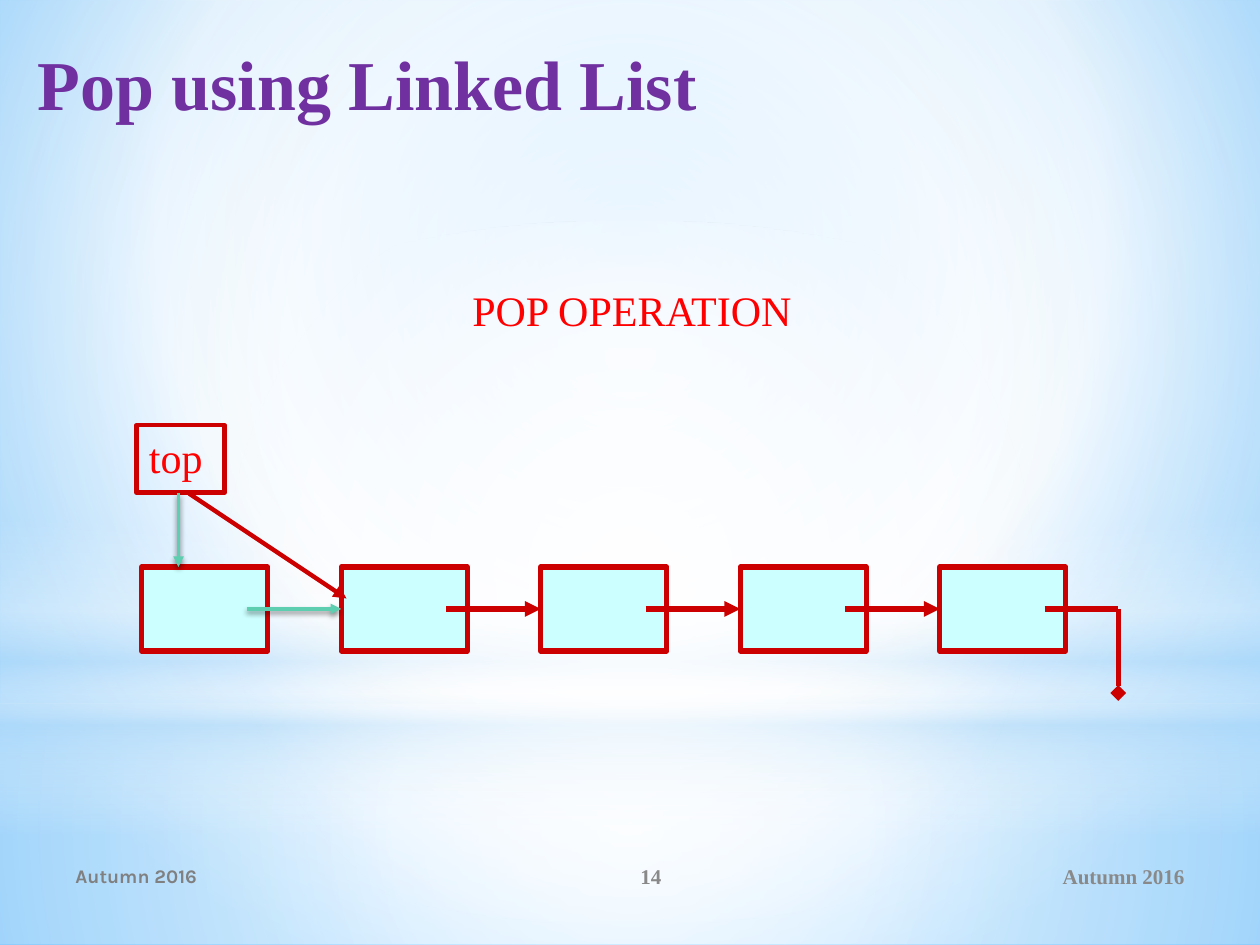
from lxml import etree
from pptx import Presentation
from pptx.dml.color import RGBColor
from pptx.enum.shapes import MSO_CONNECTOR, MSO_SHAPE
from pptx.enum.text import MSO_ANCHOR, MSO_AUTO_SIZE, PP_ALIGN
from pptx.oxml import parse_xml
from pptx.oxml.ns import nsdecls, qn
from pptx.util import Inches, Pt

RECT, OVAL = MSO_SHAPE.RECTANGLE, MSO_SHAPE.OVAL
LINE = MSO_CONNECTOR.STRAIGHT
LEFT, MID, RIGHT = PP_ALIGN.LEFT, PP_ALIGN.CENTER, PP_ALIGN.RIGHT
TOP, CENTER = MSO_ANCHOR.TOP, MSO_ANCHOR.MIDDLE
GROW, FIXED = MSO_AUTO_SIZE.SHAPE_TO_FIT_TEXT, MSO_AUTO_SIZE.NONE

COLS, ROWS = 240, 180  # grid of 24 units to the inch
HUES = {
    "white": "FFFFFF", "pale": "B4DCFA", "sky": "9ED5FF", "blue": "5BB9FF",
    "cyan": "CCFFFF", "dark": "CC0000", "red": "FF0000", "green": "5DCEAF",
    "plum": "7030A0", "gray": "898989", "dim": "808080", "black": "000000",
}


def rgb(hue):
    return RGBColor.from_string(HUES[hue])


def write(frame, text, size=24, hue="red", font="Times New Roman",
          bold=False, align=LEFT, anchor=TOP, wrap=True):
    frame.word_wrap = wrap
    frame.auto_size = FIXED if wrap else GROW
    frame.vertical_anchor = anchor
    para = frame.paragraphs[0]
    para.alignment = align
    run = para.add_run()
    run.text = text
    run.font.size, run.font.name, run.font.bold = Pt(size), font, bold
    run.font.color.rgb = rgb(hue)


def blend(owner, stops, focus=None):
    """Swap the solid fill of owner for a gradient: round with a focus, else downward."""
    marks = "".join(
        f'<a:gs pos="{pos * 1000}"><a:srgbClr val="{HUES[hue]}">'
        f'<a:alpha val="{alpha * 1000}"/></a:srgbClr></a:gs>'
        for pos, hue, alpha in stops)
    if focus:
        sides = " ".join(f'{s}="{v * 1000}"' for s, v in zip("ltrb", focus))
        way = f'<a:path path="circle"><a:fillToRect {sides}/></a:path>'
    else:
        way = '<a:lin ang="5400000" scaled="0"/>'
    fill = parse_xml(f'<a:gradFill {nsdecls("a")} rotWithShape="1">'
                     f'<a:gsLst>{marks}</a:gsLst>{way}</a:gradFill>')
    owner.replace(owner.find(qn("a:solidFill")), fill)


class Deck:
    def __init__(self):
        self.show = Presentation()
        self.show.slide_width, self.show.slide_height = Inches(10), Inches(7.5)
        self.slide = self.show.slides.add_slide(self.show.slide_layouts[5])
        self.shapes = self.slide.shapes

    def place(self, *cells):
        spans = (self.show.slide_width / COLS, self.show.slide_height / ROWS)
        return [round(cell * spans[i % 2]) for i, cell in enumerate(cells)]

    def back(self, stops, focus):
        self.slide.background.fill.solid()
        blend(self.slide.element.xpath(".//p:bgPr")[0], stops, focus)

    def box(self, *cells, kind=RECT, fill=None, line=None, width=3):
        shape = self.shapes.add_shape(kind, *self.place(*cells))
        shape.shadow.inherit = False
        if fill:
            shape.fill.solid()
            shape.fill.fore_color.rgb = rgb(fill)
        else:
            shape.fill.background()
        if line:
            shape.line.color.rgb, shape.line.width = rgb(line), Pt(width)
        else:
            shape.line.fill.background()
        return shape

    def glow(self, *cells, stops, focus=None, kind=RECT):
        shape = self.box(*cells, kind=kind, fill="white")
        blend(shape.element.spPr, stops, focus)

    def text(self, *cells, text, **style):
        area = self.shapes.add_textbox(*self.place(*cells))
        write(area.text_frame, text, **style)

    def title(self, *cells, text, **style):
        head = self.shapes.title
        head.left, head.top, head.width, head.height = self.place(*cells)
        head.text_frame.margin_top = Inches(0.11)
        write(head.text_frame, text, **style)
        head.element.getparent().append(head.element)  # to the front

    def link(self, *cells, hue="dark", width=3, tip="triangle", shade=False):
        line = self.shapes.add_connector(LINE, *self.place(*cells))
        line.line.color.rgb, line.line.width = rgb(hue), Pt(width)
        props = line.element.spPr
        if tip:
            etree.SubElement(props.find(qn("a:ln")), qn("a:tailEnd"), type=tip)
        fx = etree.SubElement(props, qn("a:effectLst"))
        if shade:
            drop = etree.SubElement(fx, qn("a:outerShdw"), blurRad=str(Pt(3.1)),
                                    dist=str(Pt(1.8)), dir="5400000", rotWithShape="0")
            tint = etree.SubElement(drop, qn("a:srgbClr"), val=HUES["black"])
            etree.SubElement(tint, qn("a:alpha"), val="45000")


def main():
    deck = Deck()

    # Backdrop
    core = (50, 50, 50, 50)
    deck.back([(0, "sky", 100), (60, "white", 100), (100, "blue", 100)], (20, 10, 20, 60))
    deck.glow(0, 134, COLS, 46, focus=core,
              stops=[(0, "white", 91), (37, "white", 76), (100, "pale", 79)])
    deck.glow(0, 0, COLS, 134, focus=core,
              stops=[(0, "white", 89), (48, "white", 62), (100, "pale", 79)])
    deck.glow(0, 99, COLS, 60,
              stops=[(0, "white", 0), (29, "white", 30), (45, "pale", 40),
                     (55, "white", 26), (65, "pale", 60), (100, "white", 0)])
    deck.glow(0, 42, COLS, 134, kind=OVAL, focus=core,
              stops=[(0, "white", 100), (56, "white", 0)])

    # Footer
    foot = {"bold": True, "anchor": CENTER}
    deck.text(162, 162, 66, 9.6, text="Autumn 2016", size=12, hue="gray", align=RIGHT, **foot)
    deck.text(12, 162, 88, 9.6, text="Autumn 2016", size=11, hue="dim", font="Karla", **foot)
    deck.text(100, 162, 48, 9.6, text="14", size=12, hue="gray", align=MID, **foot)

    # List nodes, then the links between them
    old = {"hue": "green", "width": 2, "shade": True}
    first, step, count, mid = 27, 38, 5, 116
    nodes = [first + step * i for i in range(count)]
    for x in nodes:
        deck.box(x, 108, 24, 16, fill="cyan", line="dark")
    for x in nodes[:-1]:
        style = old if x == first else {}
        deck.link(x + 20, mid, x + step, mid, **style)

    # End of the list
    deck.link(nodes[-1] + 20, mid, 213, mid, tip=None)
    deck.link(213, mid, 213, 132, tip="diamond")

    # Top pointer, before and after the pop
    head = deck.box(26, 81, 16.8, 12.8, line="dark", width=2.5)
    write(head.text_frame, "top", wrap=False)
    deck.link(34, 94, 34, 108, **old)
    deck.link(36, 94, 66, 114, width=2.5)

    # Headings
    deck.text(87.6, 53, 71.3, 12, text="POP OPERATION", wrap=False)
    deck.title(4.8, 5, 228.7, 30, text="Pop using Linked List", size=40, hue="plum", bold=True)

    deck.show.save("out.pptx")


if __name__ == "__main__":
    main()
